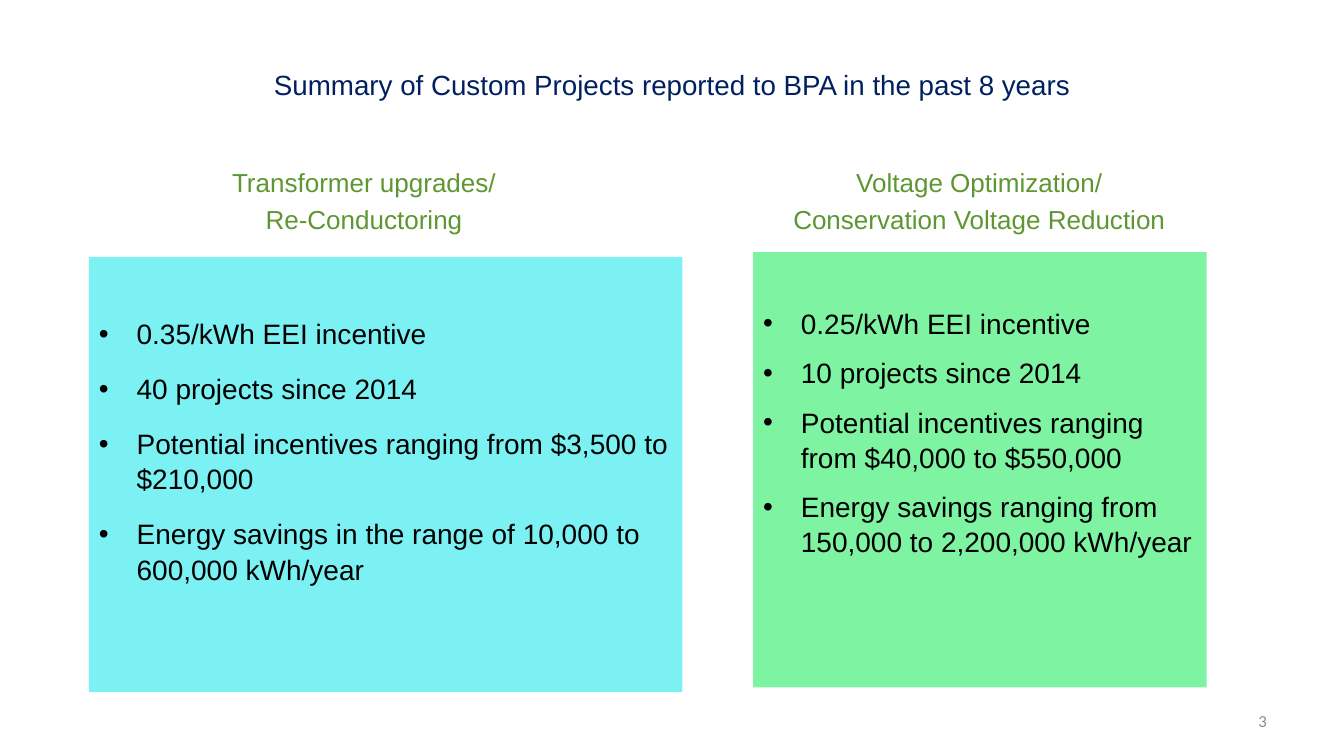
from lxml.etree import SubElement
from pptx import Presentation
from pptx.dml.color import RGBColor
from pptx.enum.shapes import MSO_SHAPE
from pptx.enum.text import MSO_ANCHOR as ANCHOR, PP_ALIGN as ALIGN
from pptx.oxml.ns import qn
from pptx.util import Pt

COLORS = {"navy": "002060", "green": "5E9732", "black": "000000", "gray": "8C8C8C",
          "cyan": "7CF1F4", "mint": "7EF4A3"}
INDENT = 27


def place(sp, left, top, width, height):
    sp.left, sp.top, sp.width, sp.height = Pt(left), Pt(top), Pt(width), Pt(height)


def write(sp, lines, size, color, align, anchor, before=0, after=0,
          font="Arial", bullet=False):
    """Fill a shape with one paragraph per line; before applies from the second on."""
    tf = sp.text_frame
    tf.word_wrap = True
    tf.vertical_anchor = anchor
    for i, line in enumerate(lines):
        p = tf.paragraphs[0] if i == 0 else tf.add_paragraph()
        if bullet:
            pPr = p._p.get_or_add_pPr()
            pPr.set("marL", str(Pt(INDENT)))
            pPr.set("indent", str(-Pt(INDENT)))
            SubElement(pPr, qn("a:buFont"), typeface="Arial")
            SubElement(pPr, qn("a:buChar"), char="•")
            p.line_spacing = 1.05
        p.alignment = align
        p.space_before = Pt(before if i else 0)
        p.space_after = Pt(after)
        r = p.add_run()
        r.text = line
        r.font.name, r.font.size = font, Pt(size)
        r.font.color.rgb = RGBColor.from_string(COLORS[color])


prs = Presentation()
prs.slide_width, prs.slide_height = Pt(960), Pt(540)
s = prs.slides.add_slide(prs.slide_layouts[5])

title = s.shapes.title
place(title, 156, 35, 648, 50)
write(title, ["Summary of Custom Projects reported to BPA in the past 8 years"],
      19.8, "navy", ALIGN.CENTER, ANCHOR.MIDDLE)

columns = [
    {"heading": ["Transformer upgrades/", "Re-Conductoring"], "heading_left": 48,
     "panel": (63.5, 183.5, 424, 311), "fill": "cyan", "inset": 41.7,
     "spacing": {"before": 4, "after": 10},
     "points": ["0.35/kWh EEI incentive", "40 projects since 2014",
                "Potential incentives ranging from $3,500 to $210,000",
                "Energy savings in the range of 10,000 to 600,000 kWh/year"]},
    {"heading": ["Voltage Optimization/", "Conservation Voltage Reduction"],
     "heading_left": 487.5,
     "panel": (538, 180, 324, 311), "fill": "mint", "inset": 37.7,
     "spacing": {"before": 10},
     "points": ["0.25/kWh EEI incentive", "10 projects since 2014",
                "Potential incentives ranging from $40,000 to $550,000",
                "Energy savings ranging from 150,000 to 2,200,000 kWh/year"]},
]
for column in columns:
    heading = s.shapes.add_textbox(Pt(column["heading_left"]), Pt(121), Pt(424), Pt(50.4))
    write(heading, column["heading"], 18.6, "green", ALIGN.CENTER, ANCHOR.BOTTOM, before=4)

    panel = s.shapes.add_shape(MSO_SHAPE.RECTANGLE, *map(Pt, column["panel"]))
    panel.shadow.inherit = False
    panel.fill.solid()
    panel.fill.fore_color.rgb = RGBColor.from_string(COLORS[column["fill"]])
    panel.line.fill.background()
    panel.text_frame.margin_top = Pt(column["inset"])
    write(panel, column["points"], 20, "black", ALIGN.LEFT, ANCHOR.TOP,
          bullet=True, **column["spacing"])

number = s.shapes.add_textbox(Pt(688), Pt(500.5), Pt(224), Pt(29))
write(number, ["3"], 12, "gray", ALIGN.RIGHT, ANCHOR.MIDDLE, font="Calibri")

prs.save("out.pptx")
